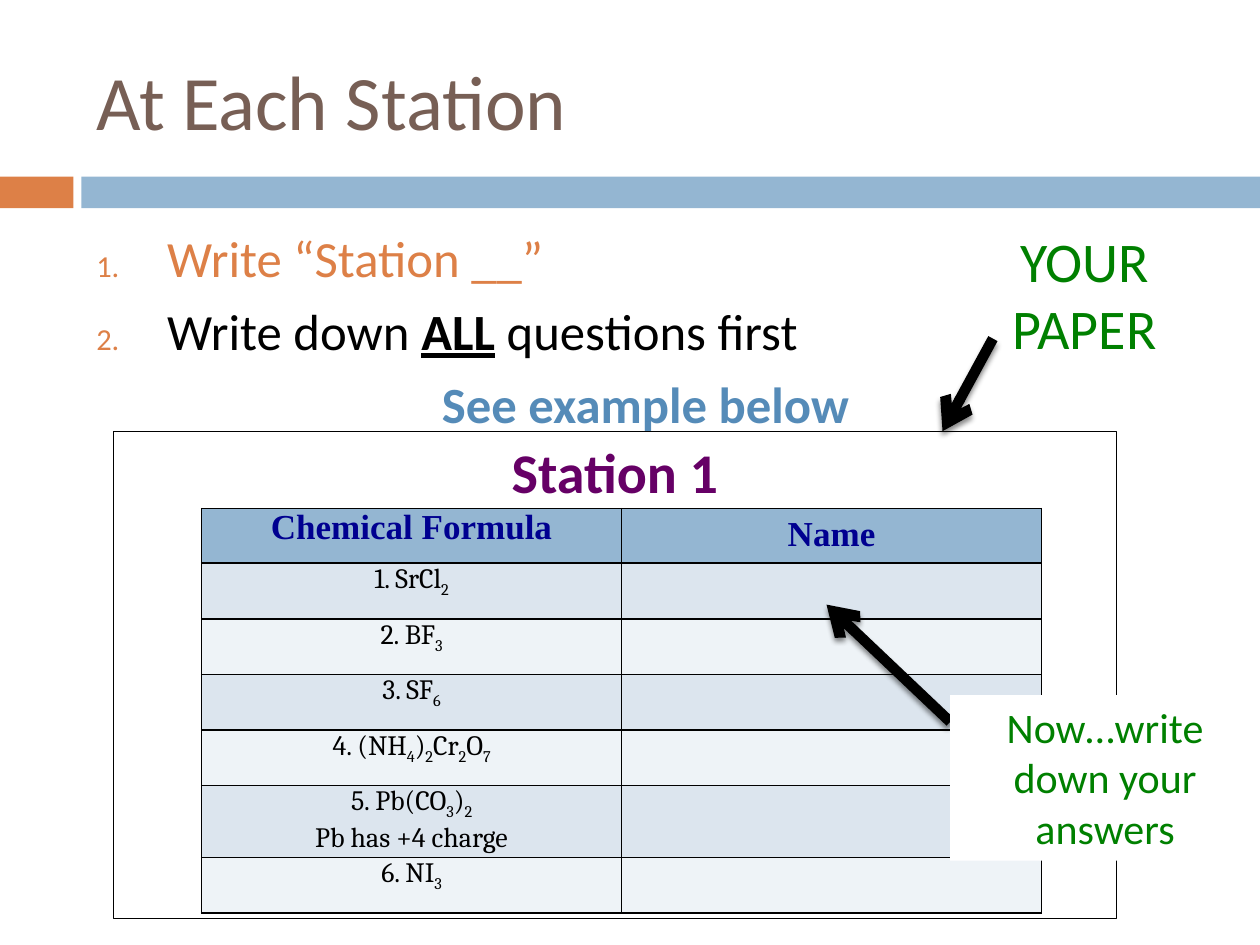
from itertools import groupby

from lxml import etree
from pptx import Presentation
from pptx.dml.color import RGBColor
from pptx.enum import shapes, text
from pptx.oxml.ns import qn
from pptx.util import Pt

COLORS = {
    "orange": "DD8047", "blue": "94B6D2", "brown": "775F55", "steel": "558BB8",
    "purple": "660066", "green": "008000", "navy": "000090", "black": "000000",
    "white": "FFFFFF", "odd_row": "DCE5EE", "even_row": "EEF3F7",
}
FORMULAS = ["SrCl2", "BF3", "SF6", "(NH4)2Cr2O7", "Pb(CO3)2", "NI3"]
NOTES = {5: "Pb has +4 charge"}
CENTER = text.PP_ALIGN.CENTER


def rgb(name):
    return RGBColor.from_string(COLORS[name])


def add_xml(parent, tag, **attributes):
    return etree.SubElement(parent, qn(tag), {k: str(v) for k, v in attributes.items()})


def add_run(paragraph, words, size, color, font="Calibri", bold=False, underline=False):
    run = paragraph.add_run()
    run.text = words
    run.font.size, run.font.name = Pt(size), font
    run.font.color.rgb = rgb(color)
    run.font.bold, run.font.underline = bold, underline
    return run


def add_box(slide, left, top, width, height, fill=None, line=None):
    box = slide.shapes.add_shape(shapes.MSO_SHAPE.RECTANGLE,
                                 Pt(left), Pt(top), Pt(width), Pt(height))
    box.shadow.inherit = False
    if fill:
        box.fill.solid()
        box.fill.fore_color.rgb = rgb(fill)
    else:
        box.fill.background()
    if line:
        box.line.color.rgb = rgb(line)
        box.line.width = Pt(0.75)
    else:
        box.line.fill.background()
    box.text_frame.word_wrap = True
    box.text_frame.vertical_anchor = text.MSO_ANCHOR.TOP
    return box


def add_caption(box, words, size, color, bold=False):
    paragraph = box.text_frame.paragraphs[0]
    paragraph.alignment = CENTER
    add_run(paragraph, words, size, color, bold=bold)


def add_arrow(slide, start, end):
    arrow = slide.shapes.add_connector(shapes.MSO_CONNECTOR.STRAIGHT,
                                       *(Pt(value) for value in start + end))
    arrow.line.color.rgb = rgb("black")
    arrow.line.width = Pt(6)
    add_xml(arrow.line._get_or_add_ln(), "a:tailEnd", type="arrow")
    effects = add_xml(arrow._element.spPr, "a:effectLst")
    shadow = add_xml(effects, "a:outerShdw", blurRad=Pt(3), dist=Pt(2.4),
                     dir=90 * 60000, rotWithShape=0)
    add_xml(add_xml(shadow, "a:srgbClr", val=COLORS["black"]), "a:alpha", val=45000)


def number_paragraph(paragraph):
    properties = paragraph._p.get_or_add_pPr()
    properties.set("marL", str(Pt(40.5)))
    properties.set("indent", str(-Pt(40.5)))
    add_xml(add_xml(properties, "a:buClr"), "a:srgbClr", val=COLORS["orange"])
    add_xml(properties, "a:buSzPct", val=60000)
    add_xml(properties, "a:buFont", typeface="Calibri")
    add_xml(properties, "a:buAutoNum", type="arabicPeriod")


def add_steps(slide):
    frame = slide.shapes.add_textbox(Pt(48), Pt(126), Pt(642), Pt(131)).text_frame
    frame.word_wrap = True
    station, questions, example = (frame.paragraphs[0], frame.add_paragraph(),
                                   frame.add_paragraph())
    for paragraph in (station, questions, example):
        paragraph.space_before = Pt(7)
    for paragraph in (station, questions):
        number_paragraph(paragraph)
    add_run(station, "Write “Station __”", 29, "orange")
    add_run(questions, "Write down ", 29, "black")
    add_run(questions, "ALL", 29, "black", bold=True, underline=True)
    add_run(questions, " questions first", 29, "black")
    example.alignment = CENTER
    add_run(example, "See example below", 29, "steel", bold=True)


def style_cell(cell, fill):
    cell.fill.solid()
    cell.fill.fore_color.rgb = rgb(fill)
    properties = cell._tc.get_or_add_tcPr()
    for position, side in enumerate(("a:lnL", "a:lnR", "a:lnT", "a:lnB")):
        border = etree.Element(qn(side), w=str(Pt(1)))
        add_xml(add_xml(border, "a:solidFill"), "a:srgbClr", val=COLORS["black"])
        properties.insert(position, border)


def trim_margins(cell):
    cell.margin_left = cell.margin_right = Pt(5)
    cell.margin_top = cell.margin_bottom = 0


def write_formula(cell, number, formula):
    """Digits of the formula become subscripts."""
    paragraph = cell.text_frame.paragraphs[0]
    paragraph.alignment = CENTER
    prefix = f"{number}. "
    for is_digit, letters in groupby(formula, str.isdigit):
        run = add_run(paragraph, prefix + "".join(letters), 16, "black", "Cambria")
        prefix = ""
        if is_digit:
            run.font._element.set("baseline", "-25000")
    if number in NOTES:
        note = cell.text_frame.add_paragraph()
        note.alignment = CENTER
        add_run(note, NOTES[number], 16, "black", "Cambria")


def add_formula_table(slide):
    table = slide.shapes.add_table(len(FORMULAS) + 1, 2, Pt(115.2), Pt(290.6),
                                   Pt(480), Pt(227.8)).table
    table.first_row = table.horz_banding = False
    # Header
    table.rows[0].height = Pt(29.5)
    for cell, heading in zip(table.rows[0].cells, ("Chemical Formula", "Name")):
        style_cell(cell, "blue")
        paragraph = cell.text_frame.paragraphs[0]
        paragraph.alignment = CENTER
        add_run(paragraph, heading, 20, "navy", "Times New Roman", bold=True)
    trim_margins(table.cell(0, 0))
    # Questions, with blank cells for the answers
    for number, formula in enumerate(FORMULAS, 1):
        table.rows[number].height = Pt(39.3 if number in NOTES else 31.8)
        question, answer = table.rows[number].cells
        for cell in (question, answer):
            style_cell(cell, "odd_row" if number % 2 else "even_row")
        trim_margins(question)
        write_formula(question, number, formula)


def add_title(slide):
    title = slide.shapes.title
    title.left, title.top, title.width, title.height = Pt(48), Pt(18), Pt(642), Pt(78)
    title.text_frame.vertical_anchor = text.MSO_ANCHOR.MIDDLE
    paragraph = title.text_frame.paragraphs[0]
    paragraph.alignment = text.PP_ALIGN.LEFT
    add_run(paragraph, "At Each Station", 44, "brown")


def main():
    deck = Presentation()
    deck.slide_width, deck.slide_height = Pt(720), Pt(540)
    slide = deck.slides.add_slide(deck.slide_layouts[5])

    # Title and divider bars
    add_box(slide, 0, 101, 42, 18, fill="orange")
    add_box(slide, 46.5, 101, 673.5, 18, fill="blue")
    add_title(slide)

    # Sample paper, instructions and table
    paper = add_box(slide, 64.8, 246.4, 573.2, 278.5, line="black")
    add_caption(paper, "Station 1", 32, "purple", bold=True)
    add_steps(slide)
    add_formula_table(slide)

    # Callouts
    add_arrow(slide, (567.4, 193.5), (538.6, 246.4))
    your_paper = add_box(slide, 531.4, 126, 177, 85)
    add_caption(your_paper, "YOUR PAPER", 32, "green")
    add_arrow(slide, (543, 412.5), (472.3, 345.5))
    answers = add_box(slide, 543, 397.3, 177, 94.5, fill="white")
    add_caption(answers, "Now…write down your answers", 24, "green")

    deck.save("out.pptx")


if __name__ == "__main__":
    main()
